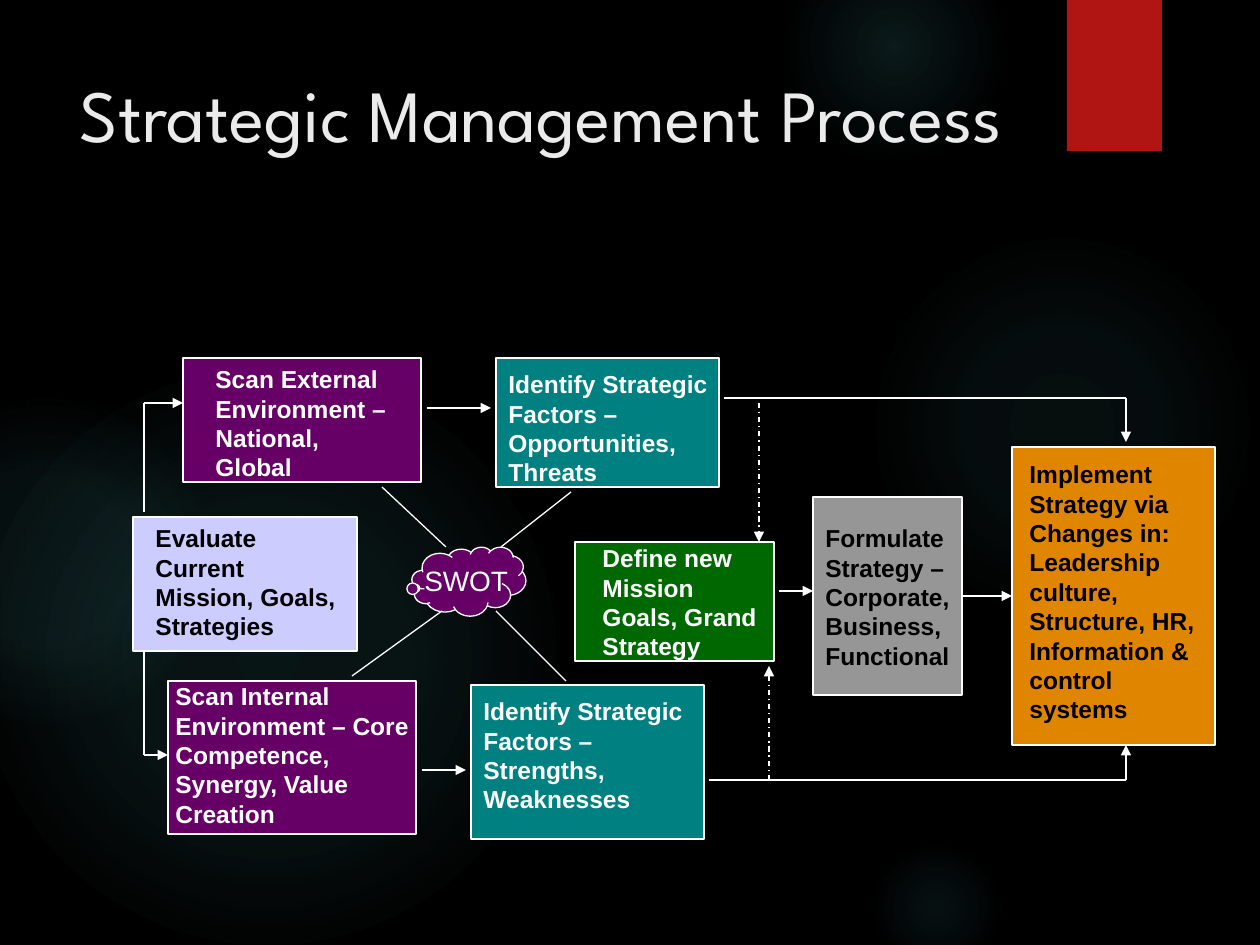
from lxml.etree import SubElement
from pptx import Presentation
from pptx.dml.color import RGBColor
from pptx.enum.dml import MSO_LINE
from pptx.enum.shapes import MSO_CONNECTOR, MSO_SHAPE
from pptx.enum.text import MSO_ANCHOR, MSO_AUTO_SIZE, PP_ALIGN
from pptx.oxml import parse_xml
from pptx.oxml.ns import nsdecls, qn
from pptx.util import Emu, Pt

SCALE = 914400 / 126
COLORS = {
    "black": "000000", "white": "FFFFFF", "title": "EBEBEB", "glow": "50B9C1",
    "red": "B01513", "lilac": "CCCCFF", "purple": "660066", "teal": "008080",
    "green": "006800", "grey": "969696", "orange": "E08500",
}

# left, top, size, then (position %, opacity %) stops
GLOWS = [
    (868, 231, 388, [(0, 7), (36, 6), (69, 0)]),
    (784, -63, 220, [(0, 14), (36, 7), (73, 0)]),
    (868, 840, 136, [(0, 9), (36, 5), (66, 0)]),
    (-21, 368, 577, [(0, 11), (36, 10), (75, 0)]),
    (-116, 399, 325, [(0, 8), (36, 8), (72, 0)]),
]

# fill, box, text box, text colour, text
STEPS = [
    ("lilac", (133, 517, 224, 134), (143, 517, 218, 130), "black",
     "Evaluate Current Mission, Goals, Strategies"),
    ("purple", (168, 681, 248, 153), (163, 675, 263, 159), "white",
     "Scan Internal Environment – Core Competence, Synergy, Value Creation"),
    ("purple", (183, 358, 238, 124), (203, 358, 208, 130), "white",
     "Scan External Environment – National, Global"),
    ("teal", (471, 685, 233, 154), (471, 690, 238, 130), "white",
     "Identify Strategic Factors – Strengths, Weaknesses"),
    ("teal", (496, 358, 223, 129), (496, 363, 263, 130), "white",
     "Identify Strategic Factors – Opportunities, Threats"),
    ("green", (575, 542, 199, 119), (590, 537, 193, 130), "white",
     "Define new Mission Goals, Grand Strategy"),
    ("grey", (813, 497, 149, 198), (813, 517, 164, 159), "black",
     "Formulate Strategy – Corporate, Business, Functional"),
    ("orange", (1012, 447, 203, 298), (1017, 453, 193, 276), "black",
     "Implement Strategy via Changes in: Leadership culture, Structure, HR, "
     "Information & control systems"),
]

PLAIN_LINES = [
    (709, 780, 1126, 780), (724, 398, 1126, 398),
    (501, 547, 571, 492), (566, 681, 496, 611),
    (446, 547, 382, 487), (352, 676, 442, 611),
    (144, 755, 144, 651), (144, 512, 144, 403),
]
ARROWS = [
    (1126, 780, 1126, 745), (962, 596, 1012, 596), (779, 591, 813, 591),
    (427, 408, 491, 408), (422, 770, 466, 770), (144, 755, 168, 755),
    (144, 403, 183, 403), (1126, 398, 1126, 442),
]
DASHED_ARROWS = [(759, 403, 759, 542), (769, 780, 769, 666)]


def px(*values):
    return [Emu(round(v * SCALE)) for v in values]


def rgb(name):
    return RGBColor.from_string(COLORS[name])


class Deck:
    """Holds the text and line style and the slide being drawn."""

    font, line_width = "Arial", Pt(0.75)

    def __init__(self, prs):
        self.slide = prs.slides.add_slide(prs.slide_layouts[5])
        self.shapes = self.slide.shapes
        fill = self.slide.background.fill
        fill.solid()
        fill.fore_color.rgb = rgb("black")

    def style_line(self, line):
        line.color.rgb = rgb("white")
        line.width = self.line_width

    def shape(self, kind, box, fill=None, outlined=True):
        sp = self.shapes.add_shape(kind, *px(*box))
        sp.shadow.inherit = False
        if fill:
            sp.fill.solid()
            sp.fill.fore_color.rgb = rgb(fill)
        if outlined:
            self.style_line(sp.line)
        else:
            sp.line.fill.background()
        return sp

    def glow(self, left, top, size, stops):
        """Draw a circle that fades outwards."""
        sp = self.shape(MSO_SHAPE.OVAL, (left, top, size, size), outlined=False)
        marks = "".join(
            f'<a:gs pos="{pos * 1000}"><a:srgbClr val="{COLORS["glow"]}">'
            f'<a:alpha val="{alpha * 1000}"/></a:srgbClr></a:gs>'
            for pos, alpha in stops)
        grad = parse_xml(
            f'<a:gradFill {nsdecls("a")}><a:gsLst>{marks}</a:gsLst><a:path path="circle">'
            '<a:fillToRect l="50000" t="50000" r="50000" b="50000"/></a:path></a:gradFill>')
        sp._element.spPr.find(qn("a:prstGeom")).addnext(grad)

    def set_text(self, tf, text, color, **style):
        tf.word_wrap = True
        p = tf.paragraphs[0]
        p.alignment = PP_ALIGN.LEFT
        r = p.add_run()
        r.text = text
        r.font.color.rgb = rgb(color)
        for key, value in {"name": self.font, **style}.items():
            setattr(r.font, key, value)

    def title(self, box, text):
        sp = self.shapes.title
        self.shapes._spTree.append(sp._element)  # bring in front of the backdrop
        for key, value in zip(("left", "top", "width", "height"), px(*box)):
            setattr(sp, key, value)
        sp.text_frame.vertical_anchor = MSO_ANCHOR.TOP
        self.set_text(sp.text_frame, text, "title", name="League Spartan", size=Pt(42))

    def text(self, box, text, color, size=14, bold=True):
        tf = self.shapes.add_textbox(*px(*box)).text_frame
        tf.auto_size = MSO_AUTO_SIZE.SHAPE_TO_FIT_TEXT
        self.set_text(tf, text, color, size=Pt(size), bold=bold)

    def connector(self, ends, arrow=False, dash=None):
        c = self.shapes.add_connector(MSO_CONNECTOR.STRAIGHT, *px(*ends))
        self.style_line(c.line)
        if dash:
            c.line.dash_style = dash
        if arrow:
            SubElement(c.line._get_or_add_ln(), qn("a:tailEnd"), type="triangle")
        SubElement(c._element.spPr, qn("a:effectLst"))


def main():
    prs = Presentation()
    prs.slide_width, prs.slide_height = px(1260, 945)
    deck = Deck(prs)

    for glow in GLOWS:
        deck.glow(*glow)
    deck.shape(MSO_SHAPE.RECTANGLE, (1067, 0, 95, 151), "red", outlined=False)
    deck.title((67, 63, 973, 193), "Strategic Management Process")

    for fill, box, *_ in STEPS:
        deck.shape(MSO_SHAPE.RECTANGLE, box, fill)
    cloud = deck.shape(MSO_SHAPE.CLOUD_CALLOUT, (412, 547, 114, 69), "purple")
    cloud.adjustments[0], cloud.adjustments[1] = -0.47, 0.1
    for _, _, box, color, text in STEPS:
        deck.text(box, text, color)
    deck.text((412, 557, 124, 47), "SWOT", "white", size=16, bold=False)

    for ends in PLAIN_LINES:
        deck.connector(ends)
    for ends in ARROWS:
        deck.connector(ends, arrow=True)
    for ends in DASHED_ARROWS:
        deck.connector(ends, arrow=True, dash=MSO_LINE.DASH_DOT)

    prs.save("out.pptx")


if __name__ == "__main__":
    main()
